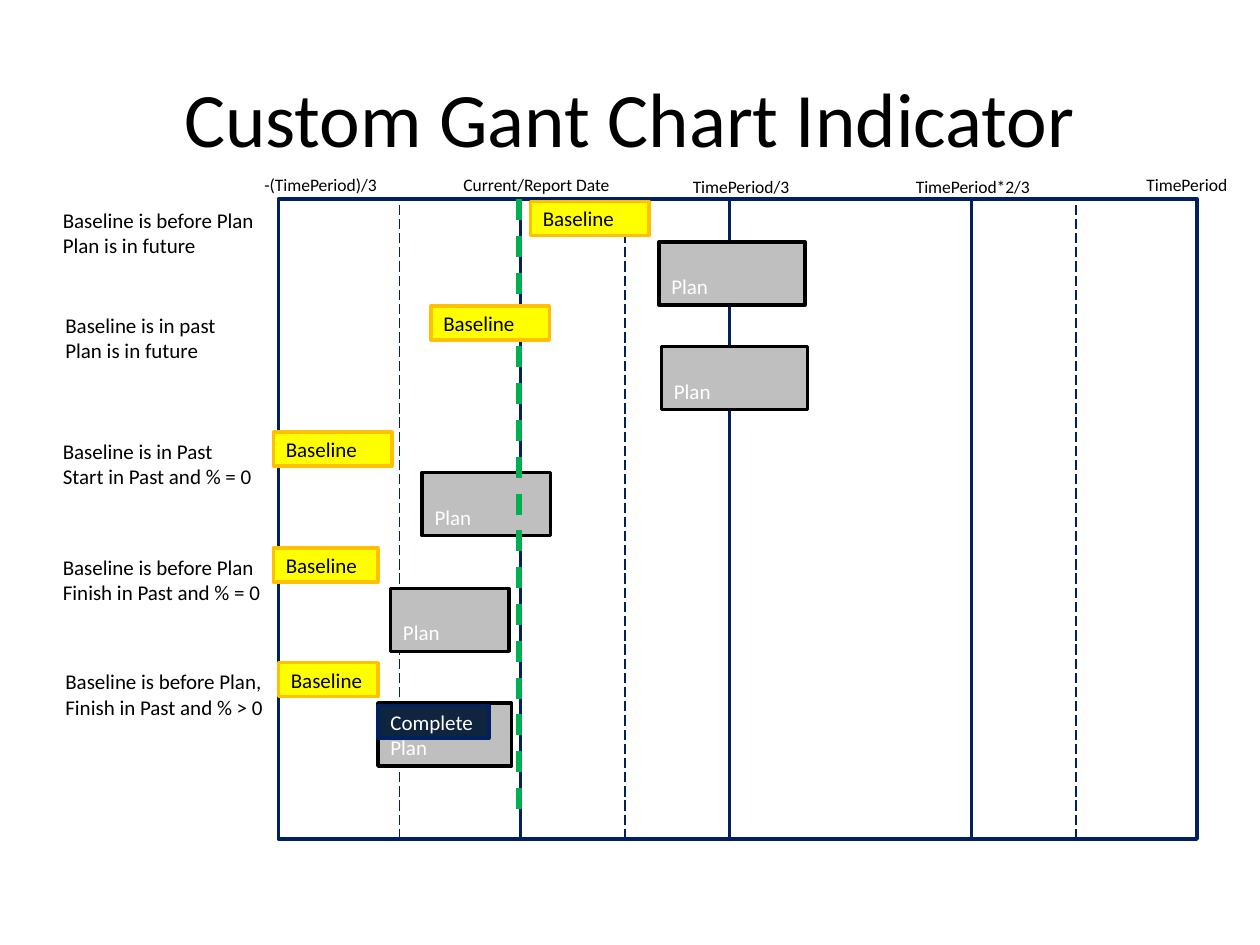
import pptx
import pptx.util
import pptx.dml.color
import pptx.enum.dml
import pptx.enum.shapes
import pptx.enum.text
import pptx.oxml.ns
import lxml.etree

Inches = pptx.util.Inches
Pt = pptx.util.Pt
Anchor = pptx.enum.text.MSO_ANCHOR
Align = pptx.enum.text.PP_ALIGN
Dash = pptx.enum.dml.MSO_LINE

FONT = "Calibri"
NAVY = "002060"
TITLE = "Custom Gant Chart Indicator"

# Period panels overlap slightly; their numbers are listed from back to front
PANEL_LEFT, PANEL_TOP, PANEL_STEP = 2.21, 1.58, 1.79
PANEL_WIDTH, PANEL_HEIGHT = 1.92, 5.08
PANELS = [(3, True), (1, True), (0, True), (2, False)]  # number, has a midline

# text, left, top, width
SCALE_LABELS = [
    ("-(TimePeriod)/3", 2, 1.33, 1.17),
    ("Current/Report Date", 3.58, 1.33, 1.44),
    ("TimePeriod", 9, 1.33, 1),
    ("TimePeriod/3", 5.4, 1.35, 1),
    ("TimePeriod*2/3", 7.17, 1.35, 1.17),
]

# top, note left, note lines, (baseline left, width), (plan left, width)
ROWS_BEHIND_DATE = [
    (1.6, 0.4, ["Baseline is before Plan", "Plan is in future"], (4.21, 0.94), (5.23, 1.16)),
    (3.43, 0.4, ["Baseline is in Past", "Start in Past and % = 0"], (2.17, 0.94), (3.35, 1.02)),
]
ROWS_OVER_DATE = [
    (2.43, 0.42, ["Baseline is in past", "Plan is in future"], (3.42, 0.94), (5.25, 1.16)),
    (4.35, 0.4, ["Baseline is before Plan", "Finish in Past and % = 0"], (2.17, 0.83), (3.1, 0.94)),
    (5.26, 0.42, ["Baseline is before Plan,", "Finish in Past and % > 0"], (2.21, 0.79), (3, 1.06)),
]
PLAN_DROP = 0.32

deck = pptx.Presentation()
deck.slide_width, deck.slide_height = Inches(10), Inches(7.5)
page = deck.slides.add_slide(deck.slide_layouts[6])


def color(value):
    return pptx.dml.color.RGBColor.from_string(value)


def write(box, lines, size, ink, anchor, align=Align.LEFT):
    frame = box.text_frame
    frame.word_wrap = True
    frame.vertical_anchor = anchor
    for number, line in enumerate(lines):
        para = frame.add_paragraph() if number else frame.paragraphs[0]
        para.alignment = align
        span = para.add_run()
        span.text = line
        span.font.name, span.font.size = FONT, Pt(size)
        span.font.color.rgb = color(ink)


def add_text(lines, left, top, width, height, size, anchor=Anchor.TOP, align=Align.LEFT):
    box = page.shapes.add_textbox(Inches(left), Inches(top), Inches(width), Inches(height))
    write(box, lines, size, "000000", anchor, align)


def add_bar(left, top, width, height, fill, edge, label=None, ink=None, anchor=Anchor.MIDDLE):
    bar = page.shapes.add_shape(pptx.enum.shapes.MSO_SHAPE.RECTANGLE,
                                Inches(left), Inches(top), Inches(width), Inches(height))
    bar.shadow.inherit = False
    bar.fill.solid()
    bar.fill.fore_color.rgb = color(fill)
    bar.line.color.rgb = color(edge)
    bar.line.width = Pt(2)
    if label:
        write(bar, [label], 12, ink, anchor)
    return bar


def add_line(x, start, end, ink, weight, dash):
    line = page.shapes.add_connector(pptx.enum.shapes.MSO_CONNECTOR.STRAIGHT,
                                     Inches(x), Inches(start), Inches(x), Inches(end))
    line.line.color.rgb = color(ink)
    line.line.width = Pt(weight)
    line.line.dash_style = dash
    properties = line._element.spPr
    lxml.etree.SubElement(properties, pptx.oxml.ns.qn("a:effectLst"))
    return line


def add_row(top, note_left, note, baseline, plan):
    plan_left, plan_width = plan
    add_bar(plan_left, top + PLAN_DROP, plan_width, 0.5, "BFBFBF", "000000",
            "Plan", "FFFFFF", Anchor.BOTTOM)
    add_text(note, note_left, top, 1.79, 0.5, 12)
    baseline_left, baseline_width = baseline
    add_bar(baseline_left, top, baseline_width, 0.27, "FFFF00", "FFC000", "Baseline", "000000")


for number, has_midline in PANELS:
    left = PANEL_LEFT + number * PANEL_STEP
    panel = add_bar(left, PANEL_TOP, PANEL_WIDTH, PANEL_HEIGHT, "FFFFFF", NAVY)
    if has_midline:
        midline = add_line(left + PANEL_WIDTH / 2, PANEL_TOP + PANEL_HEIGHT, PANEL_TOP,
                           NAVY, 0.75, Dash.LONG_DASH)
        midline.begin_connect(panel, 2)
        midline.end_connect(panel, 0)

add_text([TITLE], 0.5, 0.3, 9, 1.25, 44, Anchor.MIDDLE, Align.CENTER)
for text, left, top, width in SCALE_LABELS:
    add_text([text], left, top, width, 0.27, 10)

for row in ROWS_BEHIND_DATE:
    add_row(*row)
add_line(4.12, PANEL_TOP, 6.5, "00B050", 3, Dash.DASH)
for row in ROWS_OVER_DATE:
    add_row(*row)
add_bar(3, 5.6, 0.88, 0.26, "0F243E", NAVY, "Complete", "FFFFFF")

deck.save("out.pptx")
